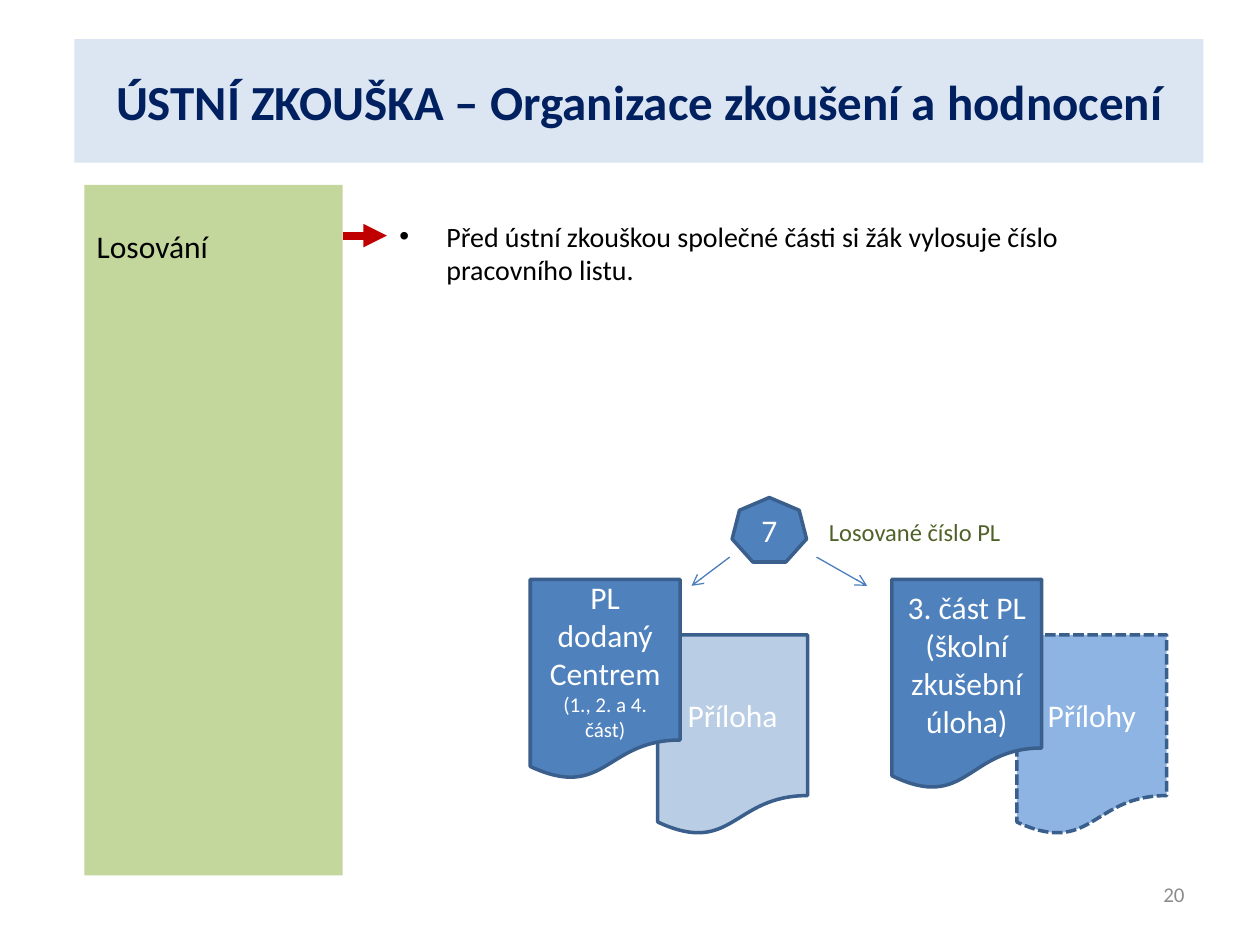
from dataclasses import dataclass

from lxml.etree import SubElement
from pptx import Presentation
from pptx.dml.color import RGBColor
from pptx.enum.dml import MSO_LINE
from pptx.enum.shapes import MSO_CONNECTOR, MSO_SHAPE
from pptx.enum.text import MSO_ANCHOR, PP_ALIGN
from pptx.oxml.ns import qn
from pptx.shapes.autoshape import Shape
from pptx.slide import Slide
from pptx.util import Cm, Pt

FONT = "Calibri"
BLACK = RGBColor(0x00, 0x00, 0x00)
WHITE = RGBColor(0xFF, 0xFF, 0xFF)
GREY = RGBColor(0x8C, 0x8C, 0x8C)
NAVY = RGBColor(0x00, 0x20, 0x60)
RED = RGBColor(0xC0, 0x00, 0x00)
GREEN = RGBColor(0xC3, 0xD6, 0x9B)
DARK_GREEN = RGBColor(0x4F, 0x62, 0x28)
BLUE = RGBColor(0x4F, 0x81, 0xBD)
OUTLINE_BLUE = RGBColor(0x3A, 0x5F, 0x8C)
ARROW_BLUE = RGBColor(0x4B, 0x7E, 0xBC)
TITLE_BLUE = RGBColor(0xDC, 0xE6, 0xF2)
PALE_BLUE = RGBColor(0xB9, 0xCD, 0xE5)
LIGHT_BLUE = RGBColor(0x8E, 0xB4, 0xE3)

CONTENT_TOP, CONTENT_HEIGHT = 3.73, 13.92
SHEET_WIDTH, SHEET_HEIGHT = 3.02, 4.04
SHEET_TOP, ATTACHMENT_TOP = 11.68, 12.8
ARROW_TOP, ARROW_BOTTOM = 11.23, 11.81


@dataclass(frozen=True)
class Sheet:
    """A document shape; lengths in centimetres, lines as (text, points)."""
    lines: tuple[tuple[str, int], ...]
    left: float
    top: float
    fill: RGBColor
    height: float = SHEET_HEIGHT
    dashed: bool = False


@dataclass(frozen=True)
class Arrow:
    start: tuple[float, float]
    end: tuple[float, float]
    color: RGBColor = ARROW_BLUE
    width: float = 0.75
    head: str = "arrow"


# Attachments lie behind the worksheets
SHEETS = (
    Sheet((("Přílohy", 18),), 20.5, ATTACHMENT_TOP, LIGHT_BLUE, dashed=True),
    Sheet((("Příloha", 18),), 13.26, ATTACHMENT_TOP, PALE_BLUE),
    Sheet((("3. část PL (školní zkušební úloha)", 18),), 17.98, SHEET_TOP, BLUE, height=4.24),
    Sheet((("PL dodaný Centrem", 18), ("(1., 2. a 4. část)", 12)), 10.69, SHEET_TOP, BLUE),
)
ARROWS = (
    Arrow((6.91, 4.75), (7.8, 4.75), RED, 4.5, "triangle"),
    Arrow((14.71, ARROW_TOP), (13.94, ARROW_BOTTOM)),
    Arrow((16.46, ARROW_TOP), (17.48, ARROW_BOTTOM)),
)


def write_text(shape: Shape, *lines: tuple[str, int], color: RGBColor = WHITE,
               bold: bool = False, align: PP_ALIGN = PP_ALIGN.CENTER,
               anchor: MSO_ANCHOR = MSO_ANCHOR.MIDDLE, top_margin: float = 0.13) -> None:
    frame = shape.text_frame
    frame.word_wrap = True
    frame.vertical_anchor = anchor
    frame.margin_top = Cm(top_margin)
    for index, (text, size) in enumerate(lines):
        paragraph = frame.add_paragraph() if index else frame.paragraphs[0]
        paragraph.alignment = align
        run = paragraph.add_run()
        run.text = text
        run.font.name = FONT
        run.font.size = Pt(size)
        run.font.bold = bold
        run.font.color.rgb = color


def add_box(slide: Slide, kind: MSO_SHAPE, left: float, top: float, width: float,
            height: float, fill: RGBColor, outlined: bool = False) -> Shape:
    shape = slide.shapes.add_shape(kind, Cm(left), Cm(top), Cm(width), Cm(height))
    shape.shadow.inherit = False
    shape.fill.solid()
    shape.fill.fore_color.rgb = fill
    if outlined:
        shape.line.color.rgb = OUTLINE_BLUE
        shape.line.width = Pt(2)
    else:
        shape.line.fill.background()
    return shape


def add_sheet(slide: Slide, sheet: Sheet) -> None:
    shape = add_box(slide, MSO_SHAPE.FLOWCHART_DOCUMENT, sheet.left, sheet.top,
                    SHEET_WIDTH, sheet.height, sheet.fill, outlined=True)
    if sheet.dashed:
        shape.line.dash_style = MSO_LINE.SQUARE_DOT
    write_text(shape, *sheet.lines)


def add_arrow(slide: Slide, arrow: Arrow) -> None:
    connector = slide.shapes.add_connector(
        MSO_CONNECTOR.STRAIGHT, *(Cm(value) for value in arrow.start + arrow.end))
    connector.line.color.rgb = arrow.color
    connector.line.width = Pt(arrow.width)
    SubElement(connector.line._get_or_add_ln(), qn("a:tailEnd"), type=arrow.head)
    SubElement(connector._element.spPr, qn("a:effectLst"))


def add_bullet(shape: Shape) -> None:
    properties = shape.text_frame.paragraphs[0]._p.get_or_add_pPr()
    indent = Cm(0.95)
    properties.set("marL", str(indent))
    properties.set("indent", str(-indent))
    SubElement(properties, qn("a:buFont"), typeface="Arial")
    SubElement(properties, qn("a:buChar"), char="•")


def add_label(slide: Slide, text: str, size: int, left: float, top: float, width: float,
              height: float, color: RGBColor, align: PP_ALIGN) -> None:
    label = slide.shapes.add_textbox(Cm(left), Cm(top), Cm(width), Cm(height))
    write_text(label, (text, size), color=color, align=align, anchor=MSO_ANCHOR.TOP)


def main() -> None:
    presentation = Presentation()
    presentation.slide_width, presentation.slide_height = Cm(25.4), Cm(19.05)
    slide = presentation.slides.add_slide(presentation.slide_layouts[6])

    # Topic panel and its explanation
    topic = add_box(slide, MSO_SHAPE.RECTANGLE, 1.7, CONTENT_TOP, 5.21, CONTENT_HEIGHT, GREEN)
    write_text(topic, ("Losování", 18), color=BLACK, align=PP_ALIGN.LEFT,
               anchor=MSO_ANCHOR.TOP, top_margin=0.84)
    explanation = add_box(slide, MSO_SHAPE.RECTANGLE, 7.8, CONTENT_TOP, 16.33,
                          CONTENT_HEIGHT, WHITE)
    write_text(explanation,
               ("Před ústní zkouškou společné části si žák vylosuje číslo pracovního listu.", 16),
               color=BLACK, align=PP_ALIGN.LEFT, anchor=MSO_ANCHOR.TOP, top_margin=0.69)
    add_bullet(explanation)

    # Title and slide number
    title = add_box(slide, MSO_SHAPE.RECTANGLE, 1.5, 0.79, 22.76, 2.49, TITLE_BLUE)
    write_text(title, ("ÚSTNÍ ZKOUŠKA – Organizace zkoušení a hodnocení", 28),
               color=NAVY, bold=True)
    add_label(slide, "20", 12, 18.21, 17.65, 5.92, 1.02, GREY, PP_ALIGN.RIGHT)

    # Drawn number
    number = add_box(slide, MSO_SHAPE.HEPTAGON, 14.76, 10.03, 1.5, 1.3, BLUE, outlined=True)
    write_text(number, ("7", 18))
    add_label(slide, "Losované číslo PL", 14, 16.46, 10.29, 5.28, 0.86,
              DARK_GREEN, PP_ALIGN.LEFT)

    # Arrows and worksheets
    for arrow in ARROWS:
        add_arrow(slide, arrow)
    for sheet in SHEETS:
        add_sheet(slide, sheet)

    presentation.save("out.pptx")


if __name__ == "__main__":
    main()
